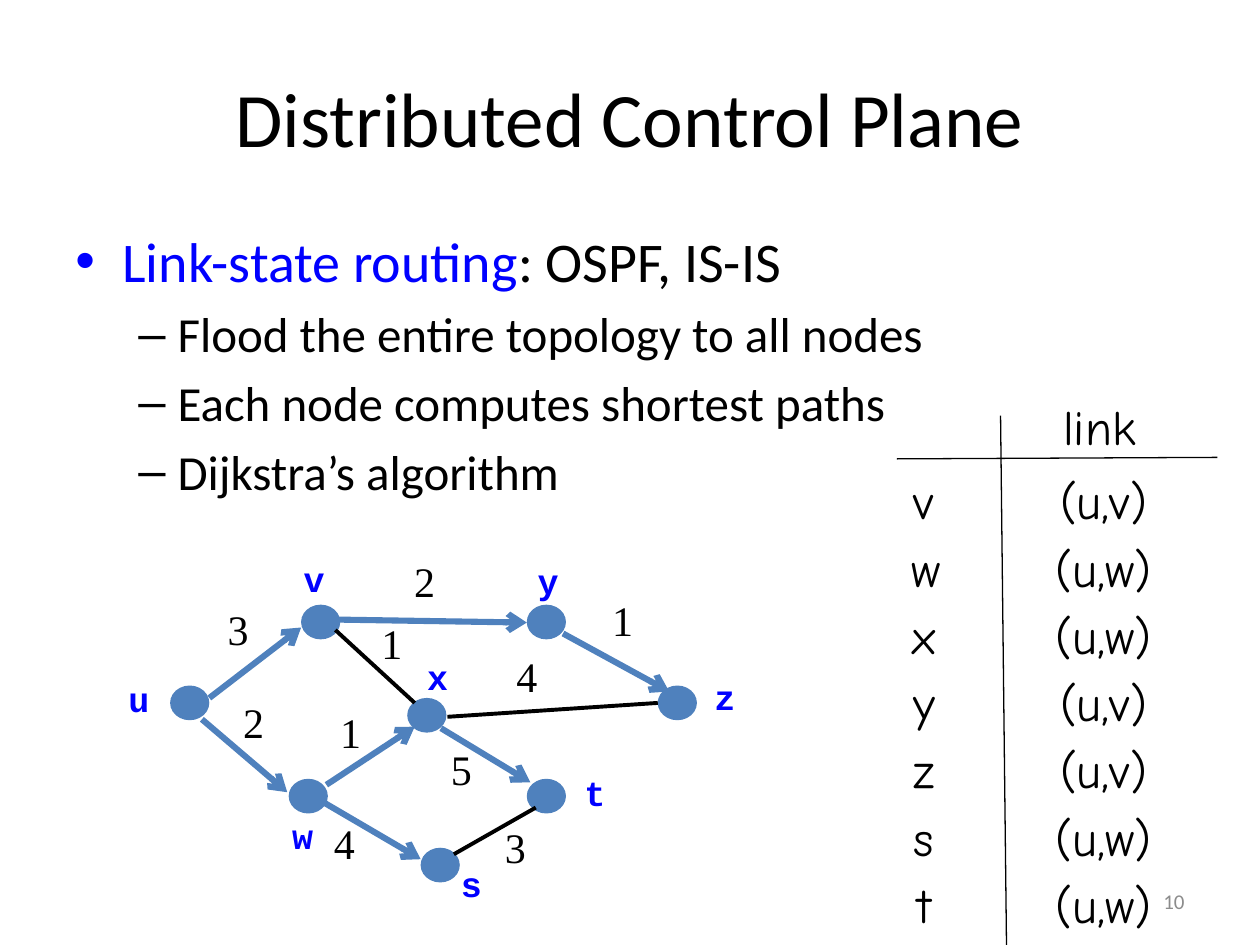
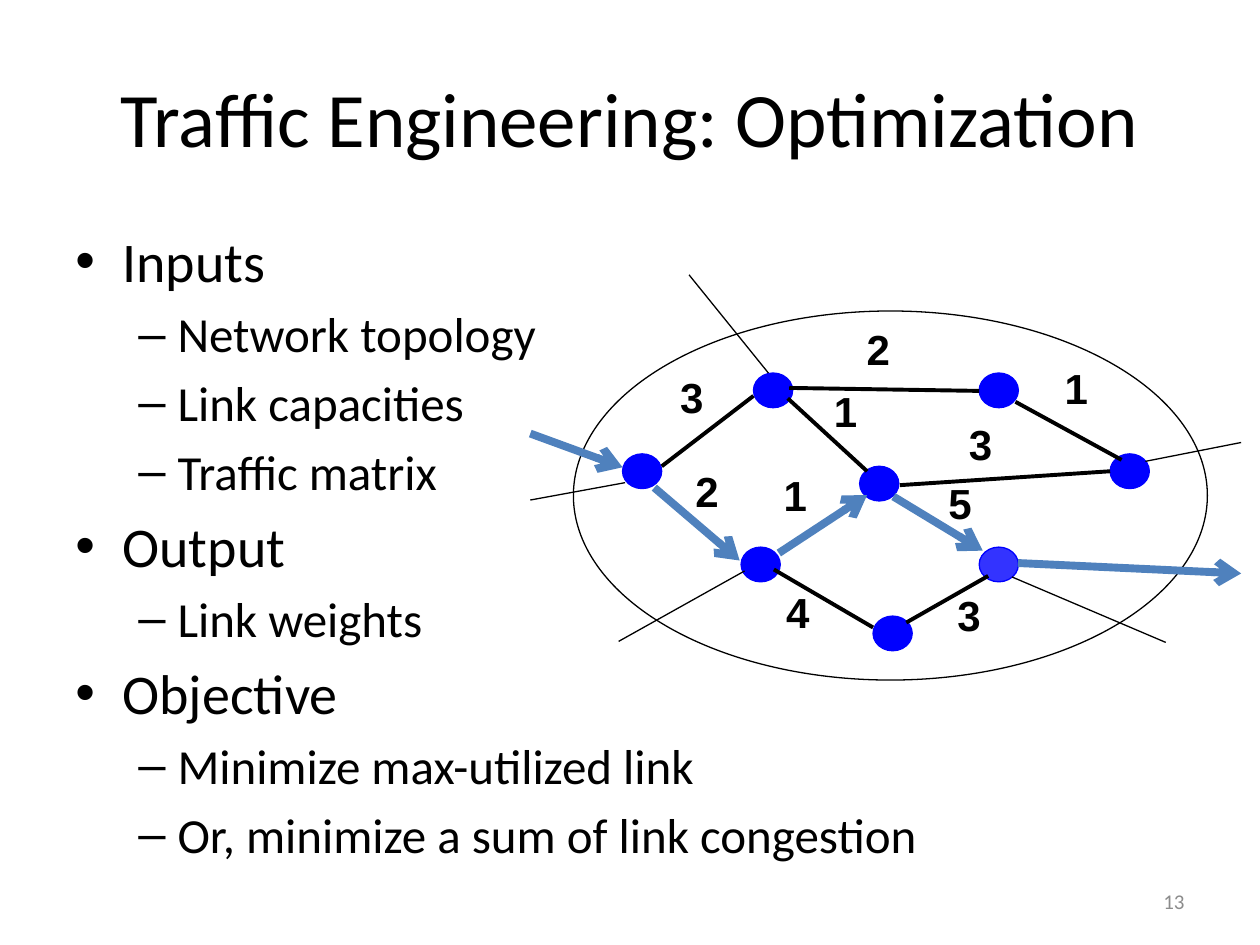
from lxml.etree import SubElement
from pptx import Presentation
from pptx.dml.color import RGBColor
from pptx.enum.shapes import MSO_CONNECTOR, MSO_SHAPE
from pptx.enum.text import MSO_ANCHOR, PP_ALIGN
from pptx.oxml.ns import qn
from pptx.util import Cm, Pt

BLACK, BLUE, STEEL, GREY = "000000", "0000FF", "4F81BD", "8C8C8C"
PALE_BLUE = "3333FF"
BULLETS = [("•", 32, 0.95, -0.95), ("–", 28, 2.06, -0.79)]

NODES = {
    "u": (0, 1.63), "w": (2.39, 3.51), "v": (2.64, 0), "x": (4.78, 1.88),
    "t": (7.19, 3.51), "y": (7.19, 0), "s": (5.05, 4.9), "z": (9.83, 1.63),
}
LINKS = {
    "uv": (0.79, 1.88, 2.64, 0.46),
    "uw": (0.64, 2.31, 2.36, 3.78),
    "vx": (3.33, 0.51, 4.93, 1.98),
    "ws": (3.05, 3.96, 5.05, 5.13),
    "wx": (3.15, 3.63, 4.93, 2.46),
    "xt": (5.46, 2.49, 7.26, 3.58),
    "st": (5.72, 5.03, 7.37, 4.09),
    "xz": (5.59, 2.26, 9.83, 1.98),
    "vy": (3.36, 0.3, 7.19, 0.36),
    "yz": (7.92, 0.58, 10.06, 1.75),
}
WEIGHTS = {
    "uv": ("3", 0.91, -0.15), "vy": ("2", 4.67, -1.12),
    "uw": ("2", 1.22, 1.73), "vx": ("1", 4.01, 0.13),
    "wx": ("1", 3.18, 1.93), "xz": ("4", 6.73, 0.79),
    "yz": ("1", 8.66, -0.33), "ws": ("4", 3.05, 4.17),
    "xt": ("5", 5.41, 2.67), "st": ("3", 6.5, 4.24),
}
NODE_LABELS = {
    "u": (-1.09, 1.35), "v": (2.44, -1.07), "w": (2.21, 4.11),
    "x": (4.93, 0.89), "y": (7.16, -1.04), "z": (10.72, 1.3),
    "s": (5.61, 5.08), "t": (8.1, 3.23),
}


def rgb(color):
    return RGBColor.from_string(color)


def add_run(p, text, size=24, font="Calibri", color=BLACK, bold=False):
    r = p.add_run()
    r.text = text
    r.font.size = Pt(size)
    r.font.name = font
    r.font.bold = bold
    r.font.color.rgb = rgb(color)


def add_frame(s, x, y, w, h, wrap=True, anchor=MSO_ANCHOR.TOP):
    tf = s.shapes.add_textbox(Cm(x), Cm(y), Cm(w), Cm(h)).text_frame
    tf.word_wrap = wrap
    tf.vertical_anchor = anchor
    return tf


def add_text(s, text, x, y, w, h, align=PP_ALIGN.LEFT, anchor=MSO_ANCHOR.TOP,
             wrap=False, **style):
    p = add_frame(s, x, y, w, h, wrap, anchor).paragraphs[0]
    p.alignment = align
    add_run(p, text, **style)


def add_body(s, items, height):
    tf = add_frame(s, 1.27, 4.45, 22.86, height)
    for i, (level, *runs) in enumerate(items):
        p = tf.paragraphs[0] if i == 0 else tf.add_paragraph()
        mark, size, margin, indent = BULLETS[level]
        p.level = level
        p.space_before = Pt(size * 0.2)
        pPr = p._p.get_or_add_pPr()
        pPr.set("marL", str(Cm(margin)))
        pPr.set("indent", str(Cm(indent)))
        SubElement(pPr, qn("a:buFont"), typeface="Arial")
        SubElement(pPr, qn("a:buChar"), char=mark)
        for text, color in runs:
            add_run(p, text, size=size, color=color)


def add_line(s, x1, y1, x2, y2, color=BLACK, width=0.75, arrow=False):
    c = s.shapes.add_connector(MSO_CONNECTOR.STRAIGHT, Cm(x1), Cm(y1), Cm(x2), Cm(y2))
    c.line.color.rgb = rgb(color)
    c.line.width = Pt(width)
    if arrow:
        SubElement(c.line._get_or_add_ln(), qn("a:tailEnd"), type="arrow")
    SubElement(c._element.spPr, qn("a:effectLst"))


def add_ellipse(s, x, y, w, h, fill=None, line=None):
    sp = s.shapes.add_shape(MSO_SHAPE.OVAL, Cm(x), Cm(y), Cm(w), Cm(h))
    sp.shadow.inherit = False
    if fill:
        sp.fill.solid()
        sp.fill.fore_color.rgb = rgb(fill)
    else:
        sp.fill.background()
    if line:
        sp.line.color.rgb = rgb(line)
        sp.line.width = Pt(0.75)
    else:
        sp.line.fill.background()


def add_network(s, left, top, route, route_width, weights, fills, outline=None, **style):
    for node, (x, y) in NODES.items():
        add_ellipse(s, left + x, top + y, 0.79, 0.7, fills[node], outline)
    for link, (x1, y1, x2, y2) in LINKS.items():
        used = link in route
        add_line(s, left + x1, top + y1, left + x2, top + y2,
                 STEEL if used else BLACK, route_width if used else 2.25, used)
    for weight, x, y in weights.values():
        add_text(s, weight, left + x, top + y, 0.94, 1.27, size=24, **style)


def add_forwarding_table(s, rows):
    style = dict(size=28, font="Comic Neue", align=PP_ALIGN.CENTER)
    add_line(s, 20.17, 8.38, 20.29, 19.07)
    add_line(s, 18.08, 9.25, 24.54, 9.22)
    add_text(s, "link", 21.11, 7.87, 2.11, 1.45, **style)
    for i, (node, hop) in enumerate(rows):
        y = 9.37 + 1.355 * i
        add_text(s, node, 18.13, y, 1, 1.45, **style)
        add_text(s, f"(u,{hop})", 20.9, y, 2.7, 1.45, **style)


def add_slide(prs, title, number, items, body_height):
    s = prs.slides.add_slide(prs.slide_layouts[6])
    add_text(s, title, 1.27, 0.76, 22.86, 3.18, size=44, wrap=True,
             align=PP_ALIGN.CENTER, anchor=MSO_ANCHOR.MIDDLE)
    add_body(s, items, body_height)
    add_text(s, number, 18.21, 17.65, 5.92, 1.02, size=12, color=GREY, wrap=True,
             align=PP_ALIGN.RIGHT, anchor=MSO_ANCHOR.MIDDLE)
    return s


def control_plane_slide(prs):
    s = add_slide(prs, "Distributed Control Plane", "10", [
        (0, ("Link-state routing", BLUE), (": OSPF, IS-IS", BLACK)),
        (1, ("Flood the entire topology to all nodes", BLACK)),
        (1, ("Each node computes shortest paths", BLACK)),
        (1, ("Dijkstra’s algorithm", BLACK)),
    ], 6.4)
    add_forwarding_table(s, zip("vwxyzst", "vwwvvww"))
    left, top = 3.43, 12.19
    add_network(s, left, top, ("uv", "uw", "ws", "wx", "xt", "vy", "yz"), 3.5,
                WEIGHTS, dict.fromkeys(NODES, STEEL), font="Times New Roman")
    for node, (x, y) in NODE_LABELS.items():
        add_text(s, node, left + x, top + y, 0.93, 1.09, size=20,
                 font="Courier New", color=BLUE, bold=True)


def optimization_slide(prs):
    s = add_slide(prs, "Traffic Engineering: Optimization", "13", [
        (0, ("Inputs", BLACK)),
        (1, ("Network topology", BLACK)),
        (1, ("Link capacities", BLACK)),
        (1, ("Traffic matrix", BLACK)),
        (0, ("Output", BLACK)),
        (1, ("Link weights", BLACK)),
        (0, ("Objective", BLACK)),
        (1, ("Minimize max-utilized link", BLACK)),
        (1, ("Or, minimize a sum of link congestion", BLACK)),
    ], 12.57)
    weights = WEIGHTS | {"wx": ("1", 3, 1.83), "xz": ("3", 6.73, 0.79),
                         "xt": ("5", 6.32, 1.98)}
    fills = dict.fromkeys(NODES, BLUE) | {"t": PALE_BLUE}
    add_network(s, 12.55, 7.52, ("uw", "wx", "xt"), 4.5, weights, fills,
                outline=BLUE, font="Arial", bold=True)
    add_ellipse(s, 11.56, 6.27, 12.78, 7.44, line=BLACK)
    for flow in ((10.69, 8.74, 12.55, 9.42), (20.52, 11.35, 25.02, 11.56)):
        add_line(s, *flow, color=STEEL, width=4.5, arrow=True)
    for edge in ((12.6, 9.73, 10.69, 10.08), (20.4, 11.63, 23.5, 12.95),
                 (25.02, 8.92, 23.09, 9.3), (13.89, 5.54, 15.49, 7.52),
                 (15.01, 11.51, 12.47, 12.93)):
        add_line(s, *edge)


def main():
    prs = Presentation()
    prs.slide_width, prs.slide_height = Cm(25.4), Cm(19.05)
    control_plane_slide(prs)
    optimization_slide(prs)
    prs.save("out.pptx")


if __name__ == "__main__":
    main()
